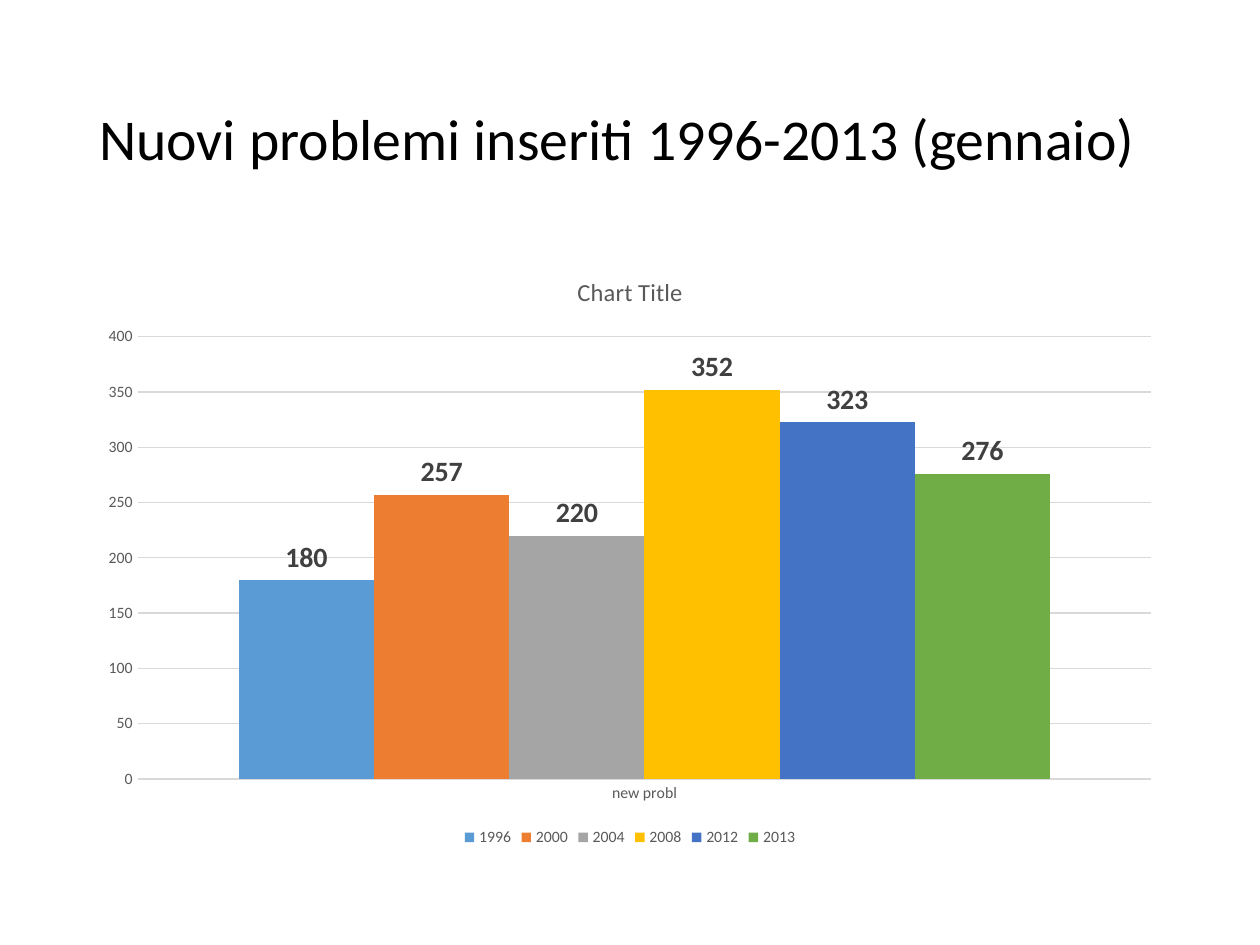
from pptx import Presentation
from pptx.chart.data import CategoryChartData
from pptx.dml.color import RGBColor
from pptx.enum.chart import XL_CHART_TYPE, XL_LABEL_POSITION, XL_LEGEND_POSITION, XL_TICK_MARK
from pptx.enum.text import MSO_ANCHOR
from pptx.util import Cm, Pt

COLUMNS = XL_CHART_TYPE.COLUMN_CLUSTERED
OUTSIDE = XL_LABEL_POSITION.OUTSIDE_END
BOTTOM = XL_LEGEND_POSITION.BOTTOM
NO_TICK = XL_TICK_MARK.NONE
MIDDLE = MSO_ANCHOR.MIDDLE

FONT = "Calibri"
GREY = "595959"
GRID = "D9D9D9"
LEFT, WIDTH = Cm(1.75), Cm(21.9)
PROBLEMS = [
    ("1996", 180, "5B9BD5"),
    ("2000", 257, "ED7D31"),
    ("2004", 220, "A5A5A5"),
    ("2008", 352, "FFC000"),
    ("2012", 323, "4472C4"),
    ("2013", 276, "70AD47"),
]


def rgb(value):
    """Turn a hex string into a colour."""
    return RGBColor.from_string(value)


def set_font(font, size, color, bold=False):
    """Give a font its face, size, colour and weight."""
    font.name = FONT
    font.size = Pt(size)
    font.bold = bold
    font.color.rgb = rgb(color)


def add_title(s, text):
    """Add the slide heading."""
    tf = s.shapes.add_textbox(LEFT, Cm(1.01), WIDTH, Cm(3.68)).text_frame
    tf.word_wrap = True
    tf.vertical_anchor = MIDDLE
    p = tf.paragraphs[0]
    p.line_spacing = 0.9
    r = p.add_run()
    r.text = text
    set_font(r.font, 33, "000000")


def style_axis(axis):
    """Set tick marks and label font of an axis."""
    axis.major_tick_mark = NO_TICK
    axis.minor_tick_mark = NO_TICK
    set_font(axis.tick_labels.font, 9, GREY)


def style_series(series, color):
    """Colour a series and label its columns."""
    series.format.fill.solid()
    series.format.fill.fore_color.rgb = rgb(color)
    series.invert_if_negative = False
    labels = series.data_labels
    labels.show_value = True
    labels.position = OUTSIDE
    set_font(labels.font, 16, "404040", True)


def add_chart(s):
    """Add the column chart of new problems by year."""
    data = CategoryChartData()
    data.categories = ["new probl"]
    for year, count, _ in PROBLEMS:
        data.add_series(year, [count])
    chart = s.shapes.add_chart(COLUMNS, LEFT, Cm(5.08), WIDTH, Cm(12.09), data).chart
    set_font(chart.font, 10, "000000")

    chart.has_title = True
    r = chart.chart_title.text_frame.paragraphs[0].add_run()
    r.text = "Chart Title"
    set_font(r.font, 14, GREY)

    chart.has_legend = True
    chart.legend.position = BOTTOM
    chart.legend.include_in_layout = False
    set_font(chart.legend.font, 9, GREY)

    style_axis(chart.category_axis)
    chart.category_axis.format.line.color.rgb = rgb(GRID)
    axis = chart.value_axis
    style_axis(axis)
    axis.minimum_scale, axis.maximum_scale, axis.major_unit = 0, 400, 50
    axis.format.line.fill.background()
    grid = axis.major_gridlines.format.line
    grid.color.rgb = rgb(GRID)
    grid.width = Pt(0.75)

    plot = chart.plots[0]
    plot.gap_width = 150
    plot.overlap = 0
    plot.vary_by_categories = False
    for series, (_, _, color) in zip(plot.series, PROBLEMS):
        style_series(series, color)


def main():
    """Build and save the slide."""
    prs = Presentation()
    prs.slide_width, prs.slide_height = Cm(25.4), Cm(19.05)
    s = prs.slides.add_slide(prs.slide_layouts[6])
    add_title(s, "Nuovi problemi inseriti 1996-2013 (gennaio)")
    add_chart(s)
    prs.save("out.pptx")


if __name__ == "__main__":
    main()
